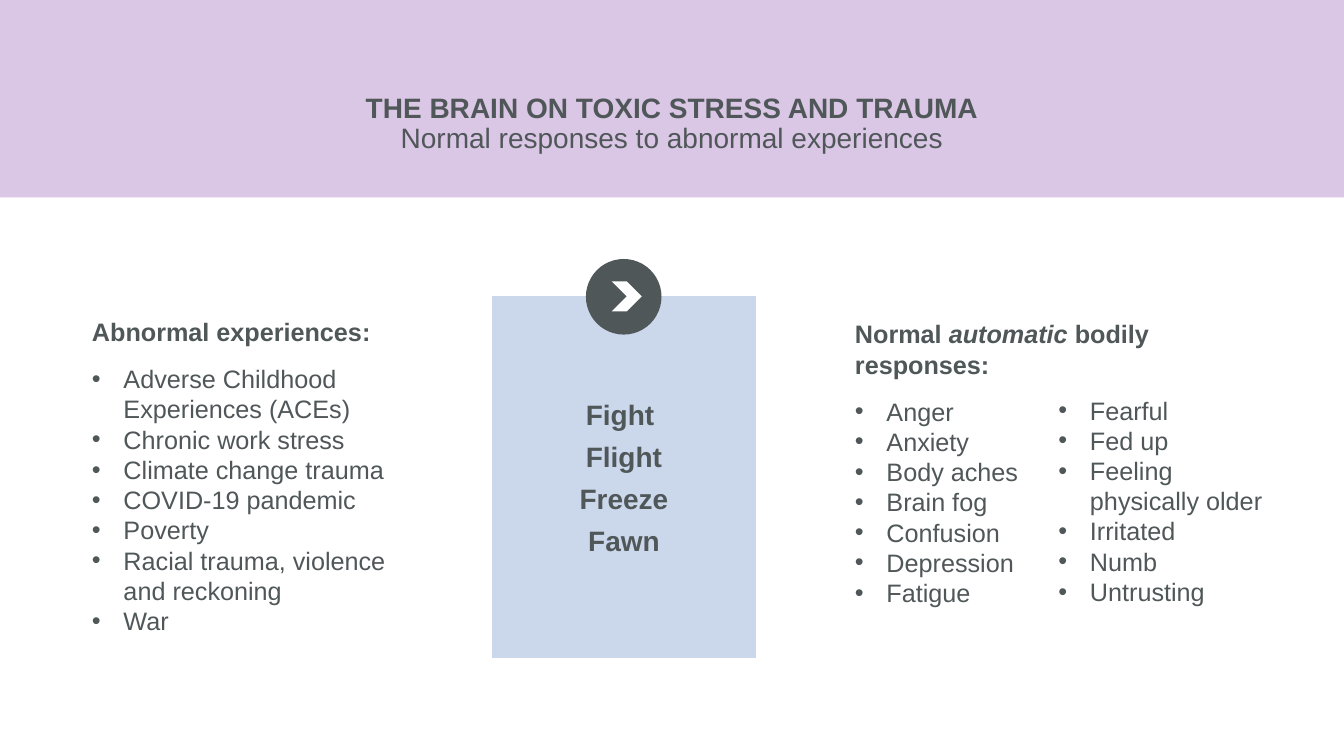
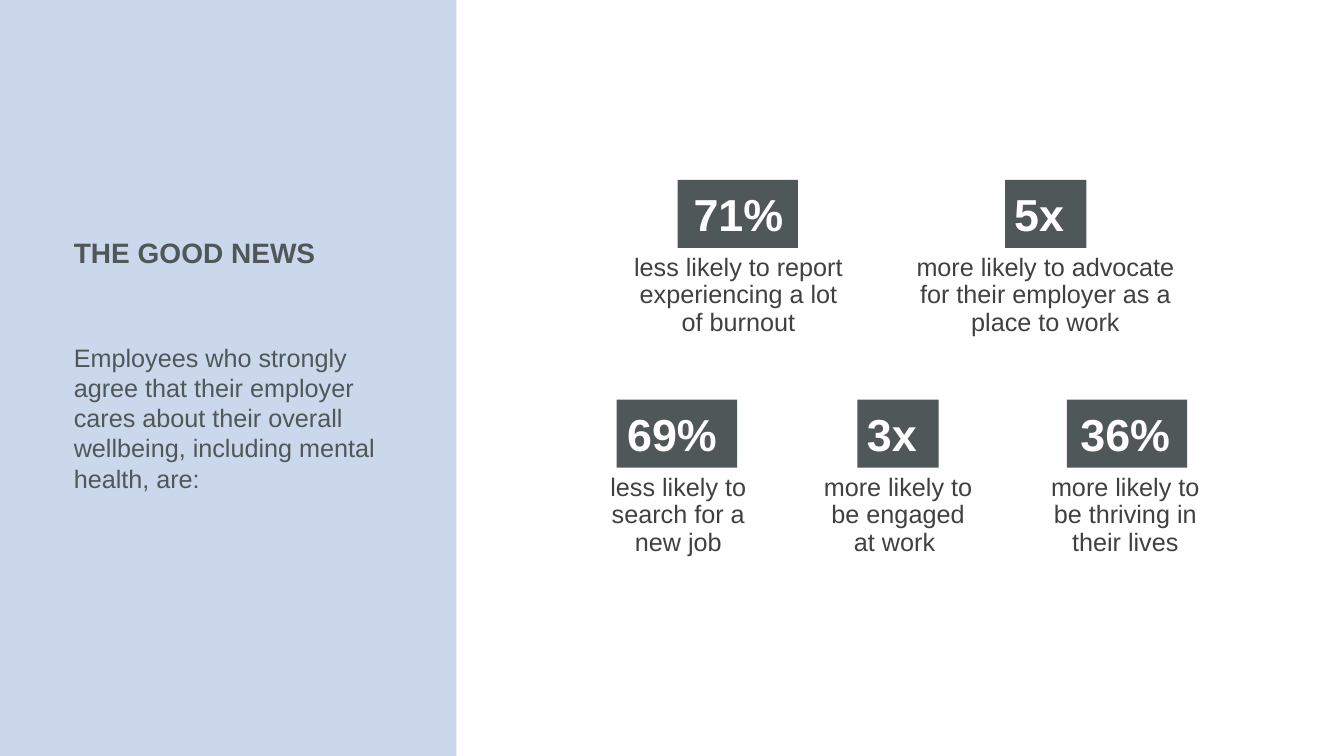
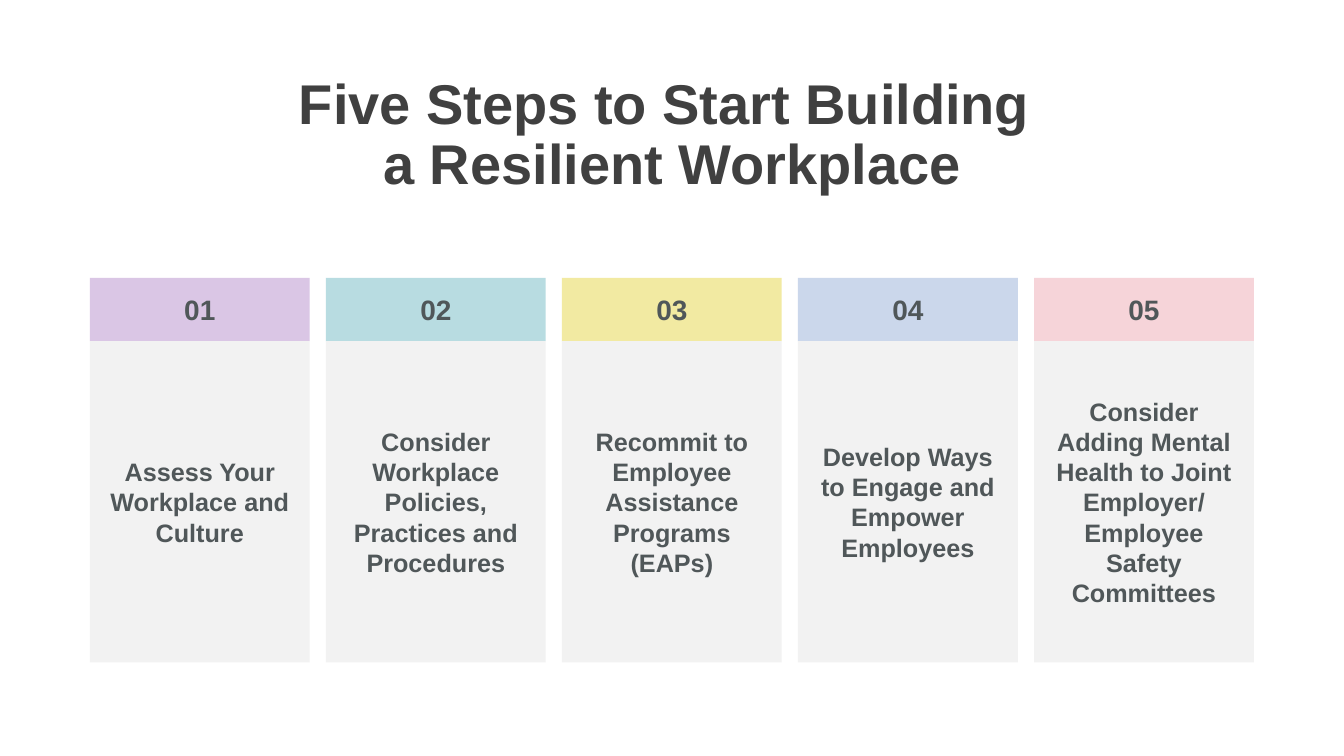
from copy import deepcopy
from dataclasses import dataclass

from lxml import etree
from pptx import Presentation
from pptx import util as u
from pptx.dml import color as c
from pptx.enum import shapes as s
from pptx.enum import text as t
from pptx.oxml import ns


@dataclass(frozen=True)
class Theme:
    font: str = "Arial"
    slate: str = "505759"
    charcoal: str = "404040"
    white: str = "FFFFFF"
    grey: str = "F2F2F2"
    lilac: str = "DAC6E5"
    teal: str = "B8DCE1"
    yellow: str = "F2EAA2"
    blue: str = "CBD7EB"
    pink: str = "F6D4D9"
    body: int = 18
    heading: int = 20
    figure: int = 32
    headline: int = 40
    tight: float = 0.9
    indent: float = 22.5


THEME = Theme()
CENTER, LEFT = t.PP_ALIGN.CENTER, t.PP_ALIGN.LEFT
TOP, MIDDLE = t.MSO_ANCHOR.TOP, t.MSO_ANCHOR.MIDDLE
WIDTH, HEIGHT = 960, 540


class Deck:
    """Holds the theme and the current slide, and draws each kind of element."""

    def __init__(self, theme):
        self.theme = theme
        self.presentation = Presentation()
        self.presentation.slide_width = u.Pt(WIDTH)
        self.presentation.slide_height = u.Pt(HEIGHT)
        self.slide = None

    def new_slide(self, layout):
        layouts = self.presentation.slide_layouts
        self.slide = self.presentation.slides.add_slide(layouts[layout])

    def place(self, shape, box):
        shape.left, shape.top, shape.width, shape.height = map(u.Pt, box)

    def frame(self, shape, anchor):
        frame = shape.text_frame
        frame.word_wrap = True
        frame.auto_size = t.MSO_AUTO_SIZE.NONE
        frame.vertical_anchor = anchor
        return frame

    def shape(self, box, fill, kind=s.MSO_SHAPE.RECTANGLE):
        shape = self.slide.shapes.add_shape(kind, *map(u.Pt, box))
        shape.shadow.inherit = False
        shape.fill.solid()
        shape.fill.fore_color.rgb = c.RGBColor.from_string(fill)
        shape.line.fill.background()
        return shape

    def band(self, box, fill):
        band = self.shape(box, fill)
        band.element.getparent().insert(2, band.element)

    def text_box(self, box, anchor):
        shape = self.slide.shapes.add_textbox(*map(u.Pt, box))
        return self.frame(shape, anchor)

    def body(self, index, box, anchor):
        shape = self.slide.placeholders[index]
        self.place(shape, box)
        return self.frame(shape, anchor)

    def title(self, box, text, size, color, align=CENTER):
        shape = self.slide.shapes.title
        self.place(shape, box)
        return self.paragraph(self.frame(shape, MIDDLE), text, size, color,
                              bold=True, align=align, spacing=self.theme.tight)

    def paragraph(self, frame, text, size, color, bold=False, align=LEFT,
                  spacing=1.0, before=0, bullet=False):
        paragraph = frame.add_paragraph() if frame.text else frame.paragraphs[0]
        first, *others = text.split("*")
        paragraph.text = first
        for part in others:
            paragraph.add_run().text = part
        properties = paragraph._p.get_or_add_pPr()
        indent = u.Pt(self.theme.indent) if bullet else 0
        properties.set("marL", str(indent))
        properties.set("indent", str(-indent))
        if bullet:
            font = etree.SubElement(properties, ns.qn("a:buFont"))
            font.set("typeface", self.theme.font)
            etree.SubElement(properties, ns.qn("a:buChar")).set("char", "•")
        else:
            etree.SubElement(properties, ns.qn("a:buNone"))
        paragraph.alignment = align
        paragraph.line_spacing = spacing
        paragraph.space_before = u.Pt(before)
        for run in paragraph.runs:
            run.font.name = self.theme.font
            run.font.size = u.Pt(size)
            run.font.bold = bold
            run.font.color.rgb = c.RGBColor.from_string(color)
        for line_break in paragraph._p.findall(ns.qn("a:br")):
            line_break.append(deepcopy(paragraph.runs[0]._r.rPr))
        return paragraph

    def bullets(self, frame, items, heading=None):
        style = self.theme.body, self.theme.slate
        title = heading and self.paragraph(frame, heading, *style, bold=True)
        for index, item in enumerate(items):
            before = 12 if heading and index == 0 else 0
            self.paragraph(frame, item, *style, before=before, bullet=True)
        return title

    def panel(self, box, fill, lines, size, before=0):
        frame = self.frame(self.shape(box, fill), MIDDLE)
        for index, line in enumerate(lines):
            self.paragraph(frame, line, size, self.theme.slate, bold=True,
                           align=CENTER, before=before if index else 0)

    def statistic(self, top, left, width, badge_left, badge_width, figure, label):
        style = {"align": CENTER, "spacing": self.theme.tight}
        self.shape((badge_left, top + 2.5, badge_width, 48.5), self.theme.slate)
        frame = self.text_box((left, top, width, 126), MIDDLE)
        self.paragraph(frame, figure, self.theme.figure, self.theme.white,
                       bold=True, **style)
        self.paragraph(frame, label, self.theme.body, self.theme.charcoal,
                       before=10, **style)


def stress_slide(deck):
    theme = deck.theme
    deck.new_slide(3)
    deck.band((0, 0, WIDTH, 141), theme.lilac)
    title = deck.title(
        (35.5, 56, 889, 66),
        "THE BRAIN ON TOXIC STRESS AND TRAUMA\nNormal responses to abnormal experiences",
        theme.heading, theme.slate)
    title.runs[1].font.bold = False
    deck.panel((351.5, 211.5, 188.5, 258.5), theme.blue,
               ["Fight ", "Flight", "Freeze", "Fawn"], theme.heading, before=6)
    deck.shape((418.5, 185, 54, 54), theme.slate, s.MSO_SHAPE.OVAL)
    deck.shape((437, 201, 21.5, 21.5), theme.white, s.MSO_SHAPE.CHEVRON)
    deck.bullets(
        deck.body(1, (58.5, 222.5, 251.5, 237.5), TOP),
        ["Adverse Childhood Experiences (ACEs)", "Chronic work stress",
         "Climate change trauma", "COVID-19 pandemic", "Poverty",
         "Racial trauma, violence and reckoning", "War"],
        "Abnormal experiences:")
    heading = deck.bullets(
        deck.body(2, (603.5, 224, 298, 216), TOP),
        ["Anger", "Anxiety", "Body aches", "Brain fog", "Confusion",
         "Depression", "Fatigue"],
        "Normal *automatic* bodily responses:")
    heading.runs[1].font.italic = True
    deck.bullets(
        deck.text_box((749, 278.5, 169, 160), TOP),
        ["Fearful", "Fed up", "Feeling physically older", "Irritated", "Numb",
         "Untrusting"])


def news_slide(deck):
    theme = deck.theme
    deck.new_slide(1)
    deck.band((0, 0, 326, HEIGHT), theme.blue)
    deck.title((45.5, 149, 201.5, 66), "THE GOOD NEWS", theme.heading,
               theme.slate, LEFT)
    deck.paragraph(
        deck.body(1, (45.5, 194.5, 233.5, 207.5), MIDDLE),
        "Employees who strongly agree that their employer cares about their "
        "overall wellbeing, including mental health, are:",
        theme.body, theme.slate)
    upper, lower = 126, 283
    wide, narrow = 86, 58
    statistics = [
        (upper, 445.5, 164, 484, wide, "71%",
         "less likely to report experiencing a lot of burnout"),
        (upper, 646, 201.5, 718, narrow, "5x ",
         "more likely to advocate for their employer as a place to work"),
        (lower, 422.5, 124, 440.5, wide, "69% ",
         "less likely to search for a new job"),
        (lower, 579.5, 124, 612.5, narrow, "3x ",
         "more likely to be engaged at work "),
        (lower, 736.5, 134.5, 762, wide, "36%",
         "more likely to be thriving in their lives"),
    ]
    for statistic in statistics:
        deck.statistic(*statistic)


def steps_slide(deck):
    theme = deck.theme
    deck.new_slide(5)
    deck.title((35.5, 53.5, 889, 88),
               "Five Steps to Start Building \na Resilient Workplace",
               theme.headline, theme.charcoal)
    steps = [
        (theme.lilac, "Assess Your Workplace and Culture"),
        (theme.teal, "Consider Workplace Policies, Practices and Procedures"),
        (theme.yellow, "Recommit to Employee Assistance Programs (EAPs)"),
        (theme.blue, "Develop Ways to Engage and Empower Employees"),
        (theme.pink, "Consider Adding Mental Health to Joint Employer/\n"
                     "Employee Safety Committees"),
    ]
    width, gap = 157, 11.6
    for index, (fill, step) in enumerate(steps):
        left = 64.2 + index * (width + gap)
        deck.panel((left, 198.4, width, 45.2), fill, [f"{index + 1:02}"],
                   theme.heading)
        deck.panel((left, 243.6, width, 229.6), theme.grey, [step], theme.body)


def main():
    deck = Deck(THEME)
    stress_slide(deck)
    news_slide(deck)
    steps_slide(deck)
    deck.presentation.save("out.pptx")


if __name__ == "__main__":
    main()
